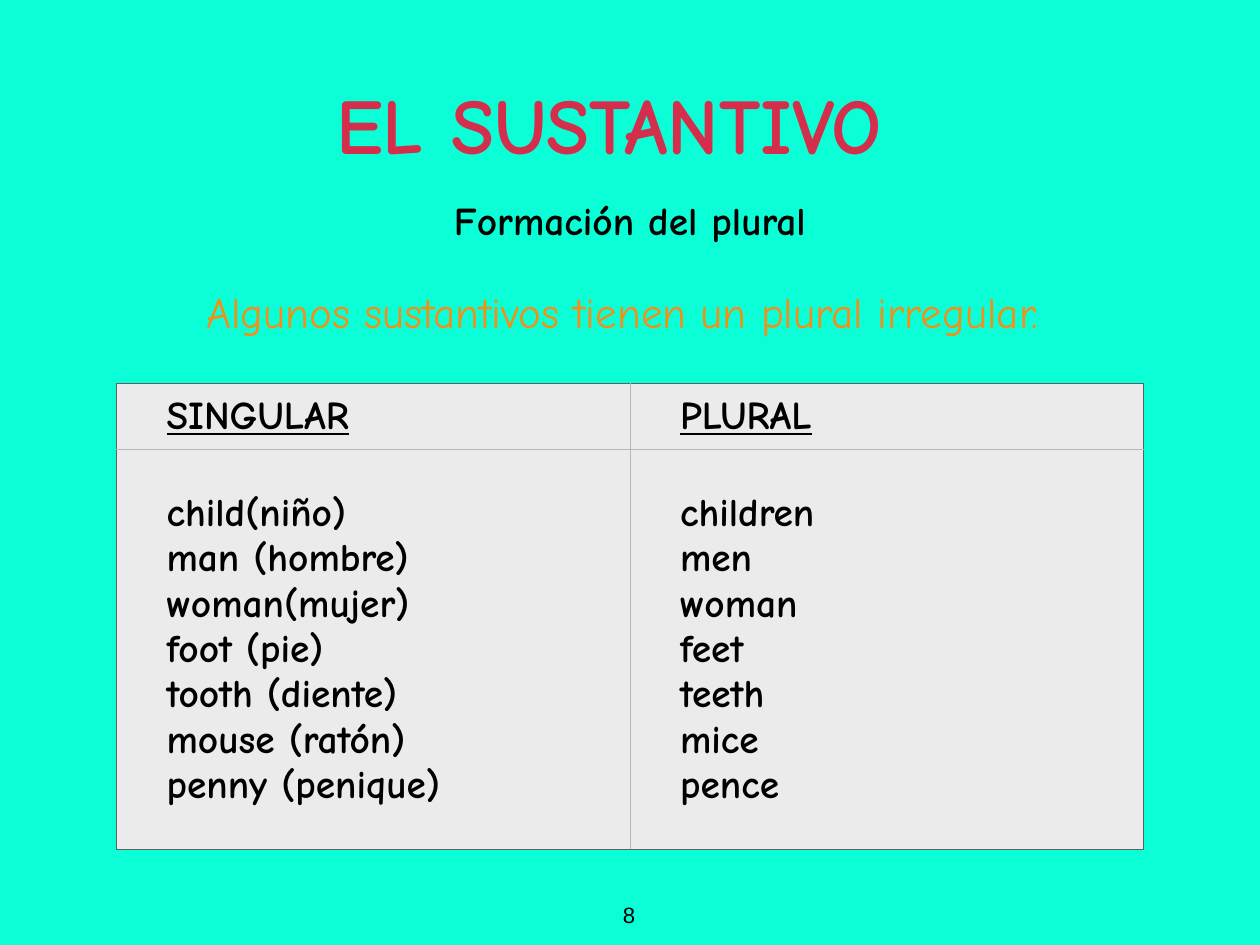
from dataclasses import dataclass

from lxml import etree
from pptx import Presentation
from pptx import util as u
from pptx.dml.color import RGBColor
from pptx.enum import text
from pptx.oxml import ns

FONT = "Comic Neue"
BLACK, CELL_FILL, OUTER, INNER = "000000", "EBEBEB", "606060", "B8B8B8"
MARGIN = u.Inches(0.06)
COLUMNS = [
    ("SINGULAR", ["child(niño)", "man (hombre)", "woman(mujer)", "foot (pie)",
                  "tooth (diente)", "mouse (ratón)", "penny (penique)"]),
    ("PLURAL", ["children", "men", "woman", "feet", "teeth", "mice", "pence"]),
]
ROW_HEIGHTS = [0.75, 4.51]


@dataclass
class Label:
    words: str
    left: float
    top: float
    width: float
    height: float
    size: int
    color: str = BLACK
    bold: bool = False
    font: str = FONT
    anchor: text.MSO_ANCHOR = text.MSO_ANCHOR.TOP
    wrap: bool = True


LABELS = [
    Label("Algunos sustantivos tienen un plural irregular. ", 1.39, 3.08, 11.44, 0.79,
          35, "F38F18", anchor=text.MSO_ANCHOR.BOTTOM),
    Label("EL SUSTANTIVO", 1.15, 0.62, 11.44, 1.36, 64, "D52D4C", True,
          anchor=text.MSO_ANCHOR.BOTTOM),
    Label("Formación del plural", 1.39, 2.16, 11.44, 0.72, 32, bold=True),
    Label("8", 6.97, 10.12, 0.26, 0.42, 18, font="Arial", wrap=False),
]


def rgb(value: str) -> RGBColor:
    return RGBColor.from_string(value)


def set_margins(holder) -> None:
    holder.margin_left = holder.margin_right = MARGIN
    holder.margin_top = holder.margin_bottom = MARGIN


def style_font(para, name: str, size: int, color: str, bold: bool) -> None:
    para.font.name = name
    para.font.size = u.Pt(size)
    para.font.bold = bold
    para.font.color.rgb = rgb(color)


def add_label(page, label: Label) -> None:
    box = page.shapes.add_textbox(u.Inches(label.left), u.Inches(label.top),
                                  u.Inches(label.width), u.Inches(label.height))
    frame = box.text_frame
    frame.word_wrap = label.wrap
    if not label.wrap:
        frame.auto_size = text.MSO_AUTO_SIZE.SHAPE_TO_FIT_TEXT
    frame.vertical_anchor = label.anchor
    set_margins(frame)
    para = frame.paragraphs[0]
    para.text = label.words
    para.alignment = text.PP_ALIGN.CENTER
    style_font(para, label.font, label.size, label.color, label.bold)


def set_borders(cell, colors: dict[str, str]) -> None:
    """Draw one-point borders, given in the order left, right, top, bottom."""
    properties = cell._tc.get_or_add_tcPr()
    for position, (side, color) in enumerate(colors.items()):
        line = etree.Element(ns.qn(f"a:ln{side}"), w=str(u.Pt(1)))
        fill = etree.SubElement(line, ns.qn("a:solidFill"))
        etree.SubElement(fill, ns.qn("a:srgbClr"), val=color)
        properties.insert(position, line)


def fill_cell(cell, lines: list[str], heading: bool) -> None:
    cell.fill.solid()
    cell.fill.fore_color.rgb = rgb(CELL_FILL)
    cell.vertical_anchor = text.MSO_ANCHOR.MIDDLE
    set_margins(cell)
    cell.text_frame.text = "\n".join(lines)
    for para in cell.text_frame.paragraphs:
        style_font(para, FONT, 32, BLACK, True)
        para.font.underline = heading
        indents = para._p.get_or_add_pPr()
        indents.set("marL", str(u.Inches(0.5)))
        indents.set("indent", "0")


def add_plural_table(page) -> None:
    frame = page.shapes.add_table(2, 2, u.Inches(1.32), u.Inches(4.33),
                                  u.Inches(11.59), u.Inches(sum(ROW_HEIGHTS)))
    table = frame.table
    table.first_row = table.horz_banding = False
    for row, height in zip(table.rows, ROW_HEIGHTS):
        row.height = u.Inches(height)
    for column, (heading, words) in enumerate(COLUMNS):
        for row, lines in enumerate([[heading], words]):
            cell = table.cell(row, column)
            fill_cell(cell, lines, heading=row == 0)
            set_borders(cell, {
                "L": INNER if column else OUTER,
                "R": OUTER if column else INNER,
                "T": INNER if row else OUTER,
                "B": OUTER if row else INNER,
            })


def main() -> None:
    deck = Presentation()
    deck.slide_width, deck.slide_height = u.Inches(14.22), u.Inches(10.67)
    page = deck.slides.add_slide(deck.slide_layouts[6])
    page.background.fill.solid()
    page.background.fill.fore_color.rgb = rgb("0BFFD6")
    for label in LABELS:
        add_label(page, label)
    add_plural_table(page)
    deck.save("out.pptx")


if __name__ == "__main__":
    main()
